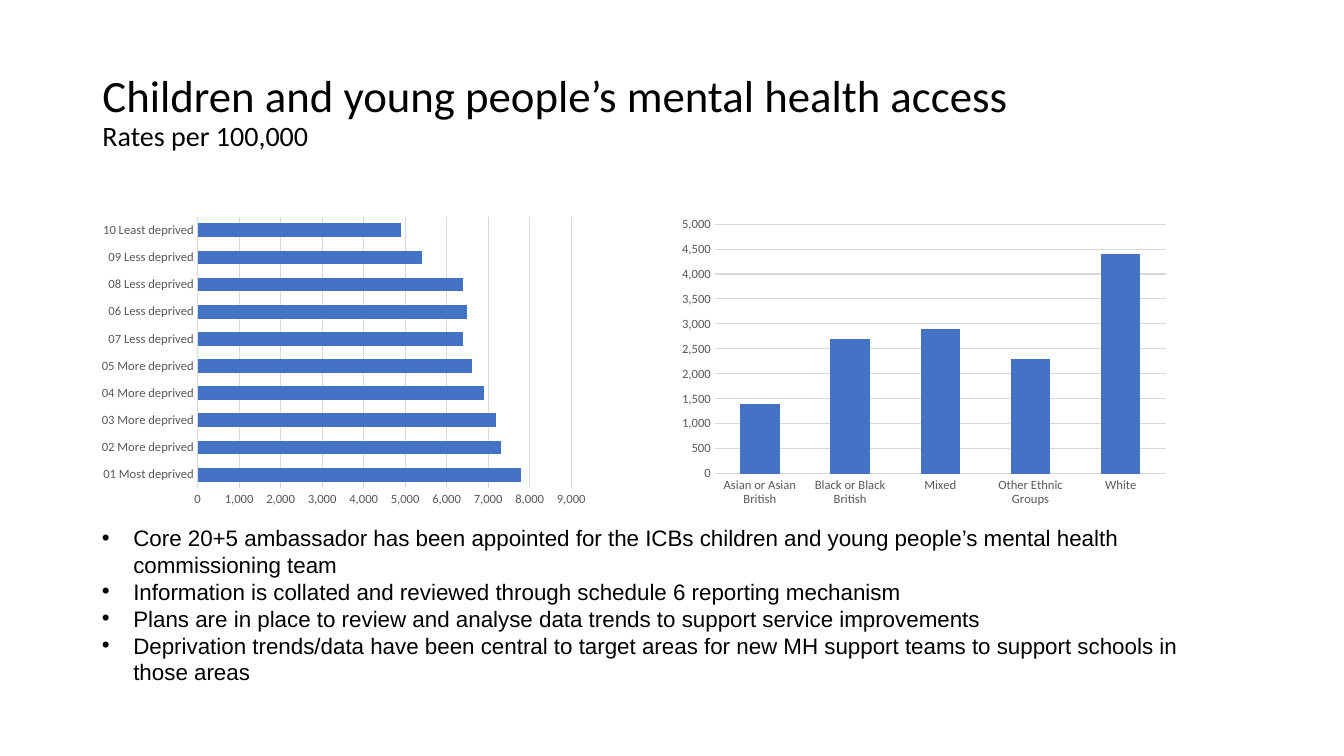
"""Build a slide on children and young people's mental health access."""
from pptx import Presentation
from pptx.chart.data import CategoryChartData
from pptx.dml.color import RGBColor
from pptx.enum.chart import XL_CHART_TYPE as CT, XL_TICK_MARK as TM
from pptx.enum.text import MSO_ANCHOR, MSO_AUTO_SIZE, PP_ALIGN
from pptx.util import Pt


def rgb(value):
    return RGBColor.from_string(value)


def place(sp, left, top, width, height):
    sp.left, sp.top, sp.width, sp.height = Pt(left), Pt(top), Pt(width), Pt(height)
    sp.text_frame.auto_size = MSO_AUTO_SIZE.NONE
    return sp.text_frame


prs = Presentation()
prs.slide_width, prs.slide_height = Pt(960), Pt(540)
s = prs.slides.add_slide(prs.slide_layouts[1])

tf = place(s.shapes.title, 66, 28.75, 828, 104.4)
tf.vertical_anchor = MSO_ANCHOR.MIDDLE
p = tf.paragraphs[0]
p.text = "Children and young people’s mental health access\vRates per 100,000"
p.alignment = PP_ALIGN.LEFT
p.line_spacing = 0.9
p.font.name, p.font.size = "Calibri", Pt(32)
p.font.color.rgb = rgb("000000")
for r, size in zip(p.runs, (32, 20)):
    r.font.size = Pt(size)

deprivation = {
    "01 Most deprived": 7800,
    "02 More deprived": 7300,
    "03 More deprived": 7200,
    "04 More deprived": 6900,
    "05 More deprived": 6600,
    "07 Less deprived": 6400,
    "06 Less deprived": 6500,
    "08 Less deprived": 6400,
    "09 Less deprived": 5400,
    "10 Least deprived": 4900,
}
ethnicity = {
    "Asian or Asian British": 1400,
    "Black or Black British": 2700,
    "Mixed": 2900,
    "Other Ethnic Groups": 2300,
    "White": 4400,
}
charts = [
    (CT.BAR_CLUSTERED, 65.5, deprivation, 97, 0, 9000, 1000),
    (CT.COLUMN_CLUSTERED, 480, ethnicity, 129, -27, 5000, 500),
]
for kind, left, rates, gap, overlap, top_rate, step in charts:
    data = CategoryChartData(number_format="#,##0")
    data.categories = list(rates)
    data.add_series("Series 1", list(rates.values()))
    chart = s.shapes.add_chart(kind, Pt(left), Pt(150.5), Pt(360), Pt(216), data).chart
    chart.has_title = chart.has_legend = False
    chart.font.name, chart.font.size = "Calibri", Pt(10)

    plot = chart.plots[0]
    plot.gap_width, plot.overlap, plot.vary_by_categories = gap, overlap, False
    fill = plot.series[0].format.fill
    fill.solid()
    fill.fore_color.rgb = rgb("4472C4")

    cat, val = chart.category_axis, chart.value_axis
    for axis in (cat, val):
        axis.major_tick_mark = axis.minor_tick_mark = TM.NONE
        font = axis.tick_labels.font
        font.name, font.size = "Calibri", Pt(9)
        font.color.rgb = rgb("595959")
    val.minimum_scale, val.maximum_scale, val.major_unit = 0, top_rate, step
    val.tick_labels.number_format = "#,##0"
    val.tick_labels.number_format_is_linked = False
    val.format.line.fill.background()
    for line in (cat.format.line, val.major_gridlines.format.line):
        line.color.rgb = rgb("D9D9D9")
        line.width = Pt(0.75)

actions = [
    "Core 20+5 ambassador has been appointed for the ICBs children and young people’s mental health commissioning team",
    "Information is collated and reviewed through schedule 6 reporting mechanism",
    "Plans are in place to review and analyse data trends to support service improvements",
    "Deprivation trends/data have been central to target areas for new MH support teams to support schools in those areas",
]
tf = place(s.placeholders[1], 65.5, 370.8, 792, 123.8)
tf.text = "\n".join(actions)
for p in tf.paragraphs:
    p.line_spacing, p.space_before = 1.0, Pt(0)
    p.font.name, p.font.size = "Arial", Pt(16)
    p.font.color.rgb = rgb("000000")
    pPr = p._p.get_or_add_pPr()
    pPr.set("marL", str(Pt(22.5)))
    pPr.set("indent", str(Pt(-22.5)))

prs.save("out.pptx")
